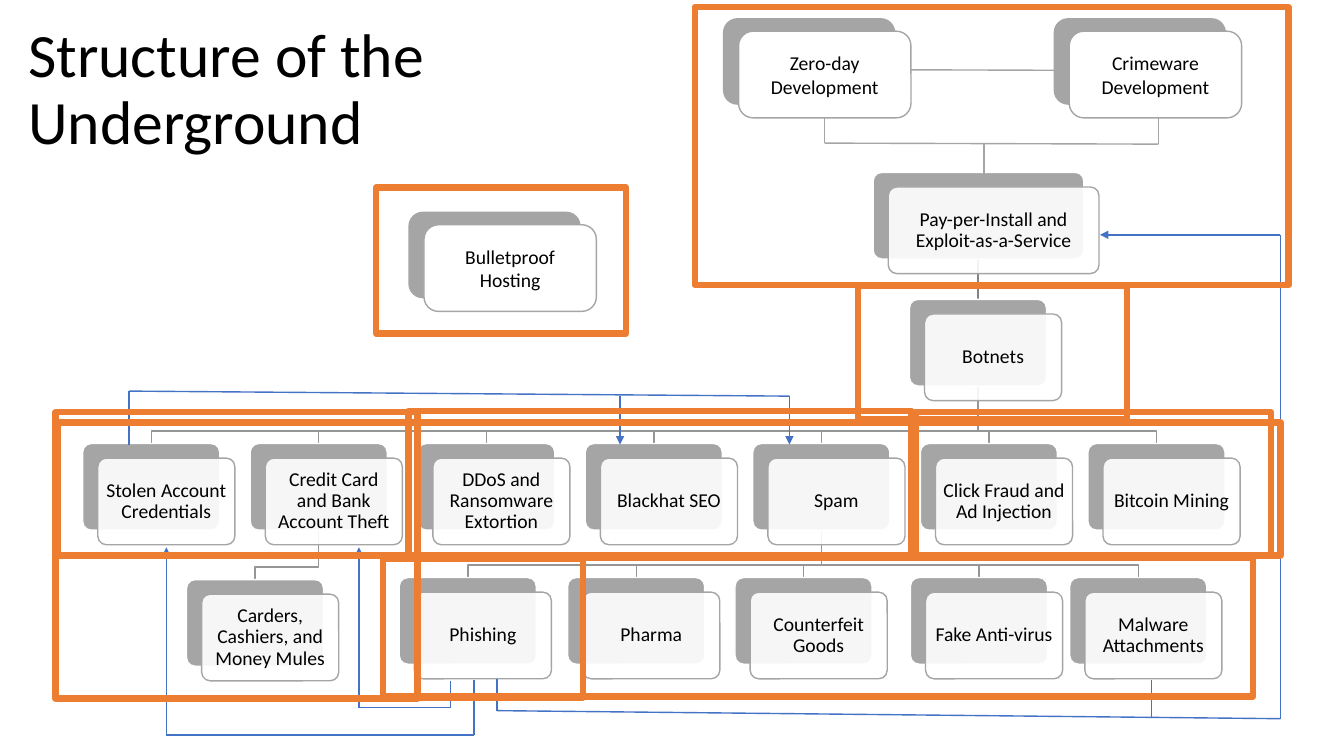
from lxml.etree import SubElement
from pptx import Presentation
from pptx.dml.color import RGBColor
from pptx.enum.shapes import MSO_CONNECTOR, MSO_SHAPE
from pptx.enum.text import MSO_ANCHOR, PP_ALIGN
from pptx.oxml.ns import qn
from pptx.util import Inches, Pt

BLACK, WHITE, GREY, TREE_GREY = "000000", "FFFFFF", "A5A5A5", "969696"
BLUE, ORANGE = "4472C4", "ED7D31"
CARD_HEIGHT = 0.86
TREE_CARD = {"offset": (0.15, 0.145), "corner": 0.1, "alpha": 90, "edge": WHITE,
             "inset": 0.05, "spacing": 0.9}
PLAIN_CARD = {"offset": (0.155, 0.13), "corner": 0.1667, "alpha": 100, "edge": None,
              "inset": 0.1, "spacing": 1.0}


def color(value):
    """Turn a hex string into a colour."""
    return RGBColor.from_string(value)


def apply(target, values):
    """Set the attributes named in a dict."""
    for name, value in values.items():
        setattr(target, name, value)


def write(para, text, size):
    """Put one formatted span into a paragraph."""
    span = para.add_run()
    span.text = text
    apply(span.font, {"name": "Calibri", "size": Pt(size)})
    span.font.color.rgb = color(BLACK)


def stroke(shape, value, width=1):
    """Outline a shape, or hide its outline when there is no colour."""
    if value is None:
        shape.line.fill.background()
        return
    shape.line.color.rgb = color(value)
    shape.line.width = Pt(width)


def add_line(page, start, end, value, arrow=False):
    """Draw a straight line, with an optional arrowhead at its end."""
    line = page.shapes.add_connector(
        MSO_CONNECTOR.STRAIGHT, *[Inches(number) for number in (*start, *end)])
    stroke(line, value)
    properties = line._element.spPr
    if arrow:
        SubElement(properties.find(qn("a:ln")), qn("a:tailEnd"), type="triangle")
    SubElement(properties, qn("a:effectLst"))


def add_trail(page, points, value, arrow=False):
    """Join points by lines, with an optional arrowhead at the last one."""
    for start, end in zip(points, points[1:]):
        add_line(page, start, end, value, arrow and end == points[-1])


def add_elbow(page, points):
    """Draw one open tree branch through its points."""
    spots = [(Inches(x), Inches(y)) for x, y in points]
    builder = page.shapes.build_freeform(*spots[0])
    builder.add_line_segments(spots[1:], close=False)
    branch = builder.convert_to_shape()
    branch.fill.background()
    branch.shadow.inherit = False
    stroke(branch, TREE_GREY)


def add_panel(page, box, corner, fill, edge):
    """Draw one rounded panel."""
    panel = page.shapes.add_shape(
        MSO_SHAPE.ROUNDED_RECTANGLE, *[Inches(number) for number in box])
    panel.adjustments[0] = corner
    panel.shadow.inherit = False
    panel.fill.solid()
    panel.fill.fore_color.rgb = color(fill)
    stroke(panel, edge)
    return panel


def add_card(page, box, text, style):
    """Draw a labelled white panel over a grey one."""
    left, top, width, height = box
    across, down = style["offset"]
    add_panel(page, box, style["corner"], GREY, style["edge"])
    front = add_panel(page, (left + across, top + down, width, height),
                      style["corner"], WHITE, GREY)
    if style["alpha"] < 100:
        fill = front._element.spPr.find(qn("a:solidFill"))
        SubElement(fill[0], qn("a:alpha"), val=str(style["alpha"] * 1000))
    frame = front.text_frame
    inset = Inches(style["inset"])
    apply(frame, {"word_wrap": True, "vertical_anchor": MSO_ANCHOR.MIDDLE,
                  "margin_left": inset, "margin_right": inset,
                  "margin_top": Inches(0.05), "margin_bottom": Inches(0.05)})
    para = frame.paragraphs[0]
    apply(para, {"alignment": PP_ALIGN.CENTER, "line_spacing": style["spacing"]})
    write(para, text, 14)


def add_frame(page, box):
    """Draw an orange group frame."""
    frame = page.shapes.add_shape(
        MSO_SHAPE.RECTANGLE, *[Inches(number) for number in box])
    frame.fill.background()
    frame.shadow.inherit = False
    stroke(frame, ORANGE, 4.5)


def add_title(page, box):
    """Place and format the two-line slide title."""
    title = page.shapes.title
    apply(title, dict(zip(("left", "top", "width", "height"), map(Inches, box))))
    apply(title.text_frame, {"word_wrap": True, "vertical_anchor": MSO_ANCHOR.MIDDLE})
    para = title.text_frame.paragraphs[0]
    apply(para, {"alignment": PP_ALIGN.LEFT, "line_spacing": 0.9})
    write(para, "Structure of the", 44)
    para.add_line_break()
    write(para, "Underground", 44)


def add_tree(page, box):
    """Draw the tree of services, its branches first."""
    left, top, width, height = box
    card_width = 1.36
    botnet_top, scheme_top, product_top = top + 1.26, top + 2.69, top + 4.02
    schemes = ["Stolen Account Credentials", "Credit Card and Bank Account Theft",
               "DDoS and Ransomware Extortion", "Blackhat SEO", "Spam",
               "Click Fraud and Ad Injection", "Bitcoin Mining"]
    step = (width - card_width - 0.15) / (len(schemes) - 1)
    scheme_lefts = [left + step * index for index in range(len(schemes))]
    products = {"Phishing": 3.14, "Pharma": 4.81, "Counterfeit Goods": 6.47,
                "Fake Anti-virus": 8.21, "Malware Attachments": 9.79}
    cards = [("Botnets", left + 8.2, botnet_top)]
    cards += [(text, x, scheme_top) for text, x in zip(schemes, scheme_lefts)]
    cards += [(text, left + x, product_top) for text, x in products.items()]
    cards.append(("Carders, Cashiers, and Money Mules", left + 1.03, product_top + 0.02))
    parents = [0] * 7 + [5] * 5 + [2]
    for (text, x, y), parent in zip(cards[1:], parents):
        start = cards[parent][1] + card_width / 2
        end = x + card_width / 2
        bus = y - 0.125
        add_elbow(page, [(start, cards[parent][2] + CARD_HEIGHT),
                         (start, bus), (end, bus), (end, y)])
    trunk = left + 8.88
    add_line(page, (trunk, top + CARD_HEIGHT), (trunk, botnet_top), "848484")
    add_card(page, (left + 7.84, top, 2.09, CARD_HEIGHT),
             "Pay-per-Install and Exploit-as-a-Service", TREE_CARD)
    for text, x, y in cards:
        add_card(page, (x, y, card_width, CARD_HEIGHT), text, TREE_CARD)


def add_flows(page, box):
    """Draw the blue flows between the services."""
    left, top, width, height = box
    trails = [
        ([(3.19, 4.43), (3.19, 4.69), (2.28, 4.69), (2.28, 3.1)], True),
        ([(3.42, 4.42), (3.42, 4.96), (0.37, 4.96), (0.37, 3.1)], True),
        ([(3.65, 4.41), (3.65, 4.72), (width, 4.8), (width, 0), (9.63, 0)], True),
        ([(10.14, 4.42), (10.14, 4.78)], False),
        ([(0, 2.08), (0, 1.55), (6.55, 1.6), (6.55, 2.08)], True),
        ([(4.87, 1.6), (4.87, 2.08)], True),
    ]
    for points, arrow in trails:
        add_trail(page, [(left + x, top + y) for x, y in points], BLUE, arrow)


def add_development(page, box):
    """Draw the two development cards, their links and their frame."""
    left, top, width, height = box
    add_line(page, (left + 4.52, top + 0.63), (left + 1.22, top + 0.62), GREY)
    for text, x in (("Zero-day Development", 0.28), ("Crimeware Development", 3.56)):
        add_card(page, (left + x, top + 0.11, 1.71, CARD_HEIGHT), text, PLAIN_CARD)
    fork = [(1.29, 1.1), (1.29, 1.35), (4.6, 1.36), (4.6, 1.1)]
    add_trail(page, [(left + x, top + y) for x, y in fork], GREY)
    add_line(page, (left + 2.87, top + 1.35), (left + 2.87, top + 1.68), GREY)
    add_frame(page, box)


def add_hosting(page, box):
    """Draw the hosting card and its frame."""
    left, top, width, height = box
    add_card(page, (left + 0.32, top + 0.24, 1.71, CARD_HEIGHT),
             "Bulletproof Hosting", PLAIN_CARD)
    add_frame(page, box)


def main():
    """Build the slide and save it."""
    deck = Presentation()
    apply(deck, {"slide_width": Inches(13.33), "slide_height": Inches(7.5)})
    page = deck.slides.add_slide(deck.slide_layouts[5])
    add_title(page, (0.18, 0.18, 11.5, 1.45))
    add_tree(page, (0.82, 1.71, 11.48, 5.05))
    add_flows(page, (1.28, 2.33, 11.42, 4.97))
    add_development(page, (6.89, 0.07, 5.89, 2.76))
    for box in ((8.51, 2.84, 2.67, 1.32), (0.57, 4.19, 12.13, 1.32),
                (0.55, 4.09, 3.59, 2.84), (4.05, 4.08, 4.99, 1.43),
                (9.08, 4.09, 3.53, 1.43), (3.8, 5.53, 8.63, 1.38),
                (3.8, 5.54, 1.98, 1.38)):
        add_frame(page, box)
    add_hosting(page, (3.73, 1.86, 2.48, 1.45))
    deck.save("out.pptx")


if __name__ == "__main__":
    main()
